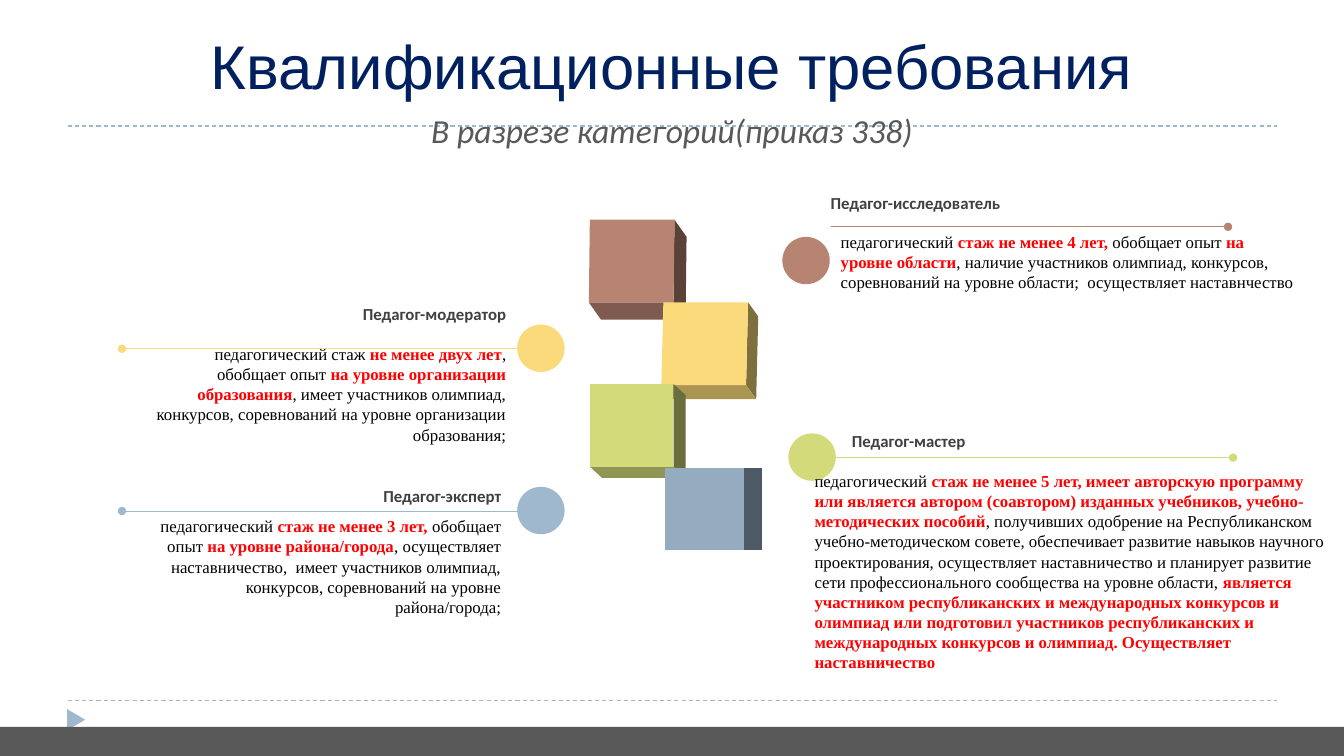
from dataclasses import dataclass

from lxml.etree import SubElement
from pptx import Presentation
from pptx.dml.color import RGBColor
from pptx.enum.dml import MSO_LINE
from pptx.enum.shapes import MSO_CONNECTOR, MSO_SHAPE
from pptx.enum.text import MSO_ANCHOR, PP_ALIGN
from pptx.oxml.ns import qn
from pptx.util import Inches, Pt

WIDTH, HEIGHT = 13.33, 7.5
NAVY = RGBColor(0x00, 0x20, 0x60)
GRAY = RGBColor(0x59, 0x59, 0x59)
DARK = RGBColor(0x40, 0x40, 0x40)
BLACK = RGBColor(0x00, 0x00, 0x00)
RED = RGBColor(0xFF, 0x00, 0x00)
BROWN = RGBColor(0xB8, 0x84, 0x72)
BROWN_SIDE = RGBColor(0x5A, 0x42, 0x39)
BROWN_BASE = RGBColor(0x7F, 0x5A, 0x50)
YELLOW = RGBColor(0xFA, 0xDA, 0x7A)
YELLOW_SIDE = RGBColor(0x7E, 0x6F, 0x3E)
YELLOW_BASE = RGBColor(0xAB, 0x95, 0x52)
GREEN = RGBColor(0xD2, 0xDA, 0x7A)
GREEN_SIDE = RGBColor(0x6A, 0x6E, 0x3D)
GREEN_BASE = RGBColor(0x8F, 0x95, 0x53)
BLUE = RGBColor(0x9F, 0xB8, 0xCD)
BLUE_FRONT = RGBColor(0x95, 0xAB, 0xC0)
BLUE_SIDE = RGBColor(0x4D, 0x5A, 0x65)

DOT = 0.47
LINE_LENGTH = 3.94
LABEL_SIZE = (3.7, 0.3)
CUBE_HEIGHT = 0.82


@dataclass
class Category:
    name: str
    color: RGBColor
    dot: tuple
    label: tuple
    line: tuple
    body: tuple
    on_left: bool
    passages: list


CATEGORIES = [
    Category("Педагог-исследователь", BROWN, (7.76, 2.35), (8.14, 1.86), (8.24, 2.25),
             (8.24, 2.25, 4.72, 0.71), False, [
                 ("педагогический ", False), ("стаж не менее 4 лет,", True),
                 (" обобщает опыт ", False), ("на уровне области", True),
                 (", наличие участников олимпиад, конкурсов, соревнований на уровне области;"
                  "  осуществляет наставнчество", False)]),
    Category("Педагог-модератор", YELLOW, (5.13, 3.22), (1.42, 2.96), (1.21, 3.46),
             (1.42, 3.36, 3.7, 1.11), True, [
                 ("педагогический стаж ", False), ("не менее двух лет", True),
                 (", обобщает опыт ", False), ("на уровне организации образования", True),
                 (", имеет участников олимпиад, конкурсов, соревнований на уровне "
                  "организации образования;", False)]),
    Category("Педагог-мастер", GREEN, (7.82, 4.3), (8.35, 4.22), (8.29, 4.54),
             (7.98, 4.62, 5.35, 2.12), False, [
                 ("педагогический ", False),
                 ("стаж не менее 5 лет, имеет авторскую программу или является автором "
                  "(соавтором) изданных учебников, учебно-методических пособий", True),
                 (", получивших одобрение на Республиканском учебно-методическом совете, "
                  "обеспечивает развитие навыков научного проектирования, осуществляет "
                  "наставничество и планирует развитие сети профессионального сообщества "
                  "на уровне области, ", False),
                 ("является участником республиканских и международных конкурсов и олимпиад "
                  "или подготовил участников республиканских и международных конкурсов и "
                  "олимпиад. Осуществляет наставничество", True)]),
    Category("Педагог-эксперт", BLUE, (5.13, 4.83), (1.37, 4.77), (1.21, 5.07),
             (1.37, 5.07, 3.7, 1.11), True, [
                 ("педагогический ", False), ("стаж не менее 3 лет, ", True),
                 ("обобщает опыт ", False), ("на уровне района/города", True),
                 (", осуществляет наставничество,  имеет участников олимпиад, конкурсов, "
                  "соревнований на уровне района/города;", False)]),
]

CUBES = [
    (5.85, 2.18, 0.84, 0.01, (0.12, 0.17), (BROWN, BROWN_SIDE, BROWN_BASE)),
    (6.58, 3.0, 0.84, 0.02, (0.1, 0.14), (YELLOW, YELLOW_SIDE, YELLOW_BASE)),
    (5.85, 3.81, 0.83, 0, (0.12, 0.11), (GREEN, GREEN_SIDE, GREEN_BASE)),
    (6.6, 4.64, 0.78, 0, (0.18, 0), (BLUE_FRONT, BLUE_SIDE, BLUE_SIDE)),
]


def paint(shape, color):
    shape.shadow.inherit = False
    shape.fill.solid()
    shape.fill.fore_color.rgb = color
    shape.line.fill.background()


def add_filled(slide, preset, box, color):
    shape = slide.shapes.add_shape(preset, *map(Inches, box))
    paint(shape, color)
    return shape


def add_line(slide, start, end, color):
    line = slide.shapes.add_connector(MSO_CONNECTOR.STRAIGHT, *map(Inches, start + end))
    line.line.color.rgb = color
    line.line.width = Pt(0.75)
    SubElement(line._element.spPr, qn("a:effectLst"))
    return line


def add_text(slide, box, align, anchor=MSO_ANCHOR.TOP):
    frame = slide.shapes.add_textbox(*map(Inches, box)).text_frame
    frame.word_wrap = True
    frame.vertical_anchor = anchor
    paragraph = frame.paragraphs[0]
    paragraph.alignment = align
    return paragraph


def add_run(paragraph, text, font, size, color, bold=False, italic=False):
    run = paragraph.add_run()
    run.text = text
    run.font.name = font
    run.font.size = Pt(size)
    run.font.color.rgb = color
    run.font.bold = bold
    run.font.italic = italic


def add_frame(slide):
    for y in (6.95, 1.25):
        line = add_line(slide, (0.67, y), (12.67, y), BLUE)
        line.line.dash_style = MSO_LINE.DASH
    triangle = add_filled(slide, MSO_SHAPE.ISOSCELES_TRIANGLE, (0.65, 7.05, 0.21, 0.18), BLUE)
    triangle.rotation = 90
    add_filled(slide, MSO_SHAPE.RECTANGLE, (0, 7.21, WIDTH, 0.29), GRAY)


def add_heading(slide, left, top, width):
    title = add_text(slide, (left, top, width, 0.85), PP_ALIGN.CENTER, MSO_ANCHOR.MIDDLE)
    add_run(title, "Квалификационные требования", "Arial", 44, NAVY)
    subtitle = add_text(slide, (left, top + 0.88, width, 0.46), PP_ALIGN.CENTER,
                        MSO_ANCHOR.MIDDLE)
    subtitle.line_spacing = 0.8
    subtitle.space_before = Pt(10)
    add_run(subtitle, "В разрезе категорий(приказ 338)", "Calibri", 24, GRAY, italic=True)


def add_category(slide, category):
    align = PP_ALIGN.RIGHT if category.on_left else PP_ALIGN.LEFT
    add_filled(slide, MSO_SHAPE.OVAL, category.dot + (DOT, DOT), category.color)
    body = add_text(slide, category.body, align)
    for text, key in category.passages:
        add_run(body, text, "Times New Roman", 12, RED if key else BLACK, bold=key)
    label = add_text(slide, category.label + LABEL_SIZE, align)
    add_run(label, category.name, "Calibri", 12, DARK, bold=True)
    x, y = category.line
    line = add_line(slide, (x, y), (x + LINE_LENGTH, y), category.color)
    outer_end = "a:headEnd" if category.on_left else "a:tailEnd"
    SubElement(line.line._get_or_add_ln(), qn(outer_end), type="oval")


def add_face(slide, points, color):
    start, *others = [(Inches(x), Inches(y)) for x, y in points]
    builder = slide.shapes.build_freeform(*start)
    builder.add_line_segments(others, close=True)
    paint(builder.convert_to_shape(), color)


def add_cube(slide, left, top, width, skew, depth, colors):
    front, side, base = colors
    bottom = top + CUBE_HEIGHT
    top_left, top_right = (left, top), (left + width, top)
    low_left, low_right = (left - skew, bottom), (left + width - skew, bottom)

    def back(point):
        return point[0] + depth[0], point[1] + depth[1]

    add_face(slide, [top_right, back(top_right), back(low_right), low_right], side)
    if depth[1]:
        add_face(slide, [low_left, low_right, back(low_right), back(low_left)], base)
    add_face(slide, [top_left, top_right, low_right, low_left], front)


def main():
    presentation = Presentation()
    presentation.slide_width = Inches(WIDTH)
    presentation.slide_height = Inches(HEIGHT)
    slide = presentation.slides.add_slide(presentation.slide_layouts[6])
    add_frame(slide)
    add_heading(slide, 0, 0.22, WIDTH)
    for category in CATEGORIES:
        add_category(slide, category)
    for cube in CUBES:
        add_cube(slide, *cube)
    presentation.save("out.pptx")


if __name__ == "__main__":
    main()
